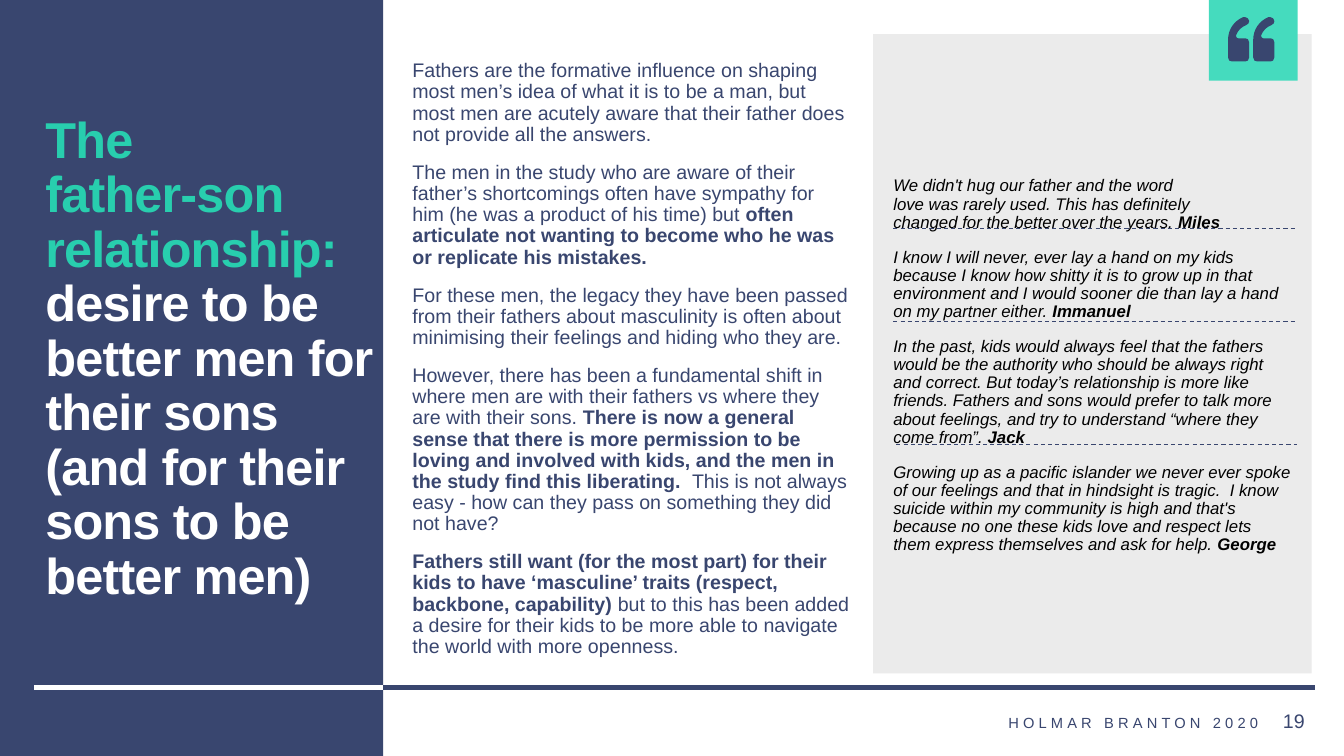
from dataclasses import dataclass

import lxml.etree
import pptx
import pptx.dml.color
import pptx.enum.dml
import pptx.enum.shapes
import pptx.enum.text
import pptx.oxml.ns
import pptx.util

Inches = pptx.util.Inches
qn = pptx.oxml.ns.qn
Align = pptx.enum.text.PP_ALIGN
Anchor = pptx.enum.text.MSO_ANCHOR
COLORS = {"navy": "39466F", "teal": "28CEAE", "mint": "45DBBE",
          "grey": "EBEBEB", "white": "FFFFFF", "black": "000000"}


@dataclass(frozen=True)
class Box:
    left: float
    top: float
    width: float
    height: float


@dataclass(frozen=True)
class Panel:
    box: Box
    color: str


@dataclass(frozen=True)
class Rule:
    left: float
    right: float
    y: float
    color: str = "navy"
    width: float = 3
    dashed: bool = False


@dataclass(frozen=True)
class Span:
    text: str
    bold: bool = False
    color: str = ""


@dataclass(frozen=True)
class Style:
    size: float
    color: str
    bold: bool = False
    italic: bool = False
    tracking: int = 0
    align: Align = Align.LEFT
    line: float = 0.9
    before: float = 0


FOOTER_RULE = Rule(0.34, 13.04, 6.82)
TITLE_RULE = Rule(0.34, 3.8, 6.82, "white")
QUOTE_RULES = [Rule(8.86, 12.84, 2.27, width=0.75, dashed=True),
               Rule(8.86, 12.84, 3.19, width=0.75, dashed=True),
               Rule(8.89, 12.86, 4.41, width=0.75, dashed=True)]
PANELS = [Panel(Box(8.66, 0.34, 4.35, 6.34), "grey"),
          Panel(Box(11.99, 0, 0.88, 0.8), "mint"),
          Panel(Box(0, 0, 3.8, 7.5), "navy")]
MARK_START = (12.18, 0.57)
MARK_CURVES = [
    ((12.18, 0.6), (12.2, 0.61), (12.22, 0.61)),
    ((12.35, 0.61),) * 3,
    ((12.37, 0.61), (12.39, 0.6), (12.39, 0.57)),
    ((12.39, 0.42),) * 3,
    ((12.39, 0.39), (12.37, 0.38), (12.35, 0.38)),
    ((12.28, 0.38),) * 3,
    ((12.27, 0.38), (12.26, 0.37), (12.26, 0.36)),
    ((12.26, 0.35),) * 3,
    ((12.28, 0.3), (12.31, 0.27), (12.36, 0.25)),
    ((12.38, 0.24), (12.39, 0.23), (12.39, 0.21)),
    ((12.39, 0.19), (12.37, 0.17), (12.35, 0.17)),
    ((12.34, 0.17), (12.34, 0.17), (12.33, 0.17)),
    ((12.24, 0.21), (12.18, 0.29), (12.18, 0.4)),
]
TITLE = [[Span("The \nfather-son relationship: ", color="teal"),
          Span("desire to be better men for their sons (and for their sons to be better men)")]]
FINDINGS = [
    [Span("Fathers are the formative influence on shaping most men’s idea of what it is to be a man, but most men are acutely aware that their father does not provide all the answers.")],
    [Span("The men in the study who are aware of their father’s shortcomings often have sympathy for him (he was a product of his time) but "),
     Span("often articulate not wanting to become who he was or replicate his mistakes.", True)],
    [Span("For these men, the legacy they have been passed from their fathers about masculinity is often about minimising their feelings and hiding who they are.")],
    [Span("However, there has been a fundamental shift in where men are with their fathers vs where they are with their sons. "),
     Span("There is now a general sense that there is more permission to be loving and involved with kids, and the men in the study find this liberating.  ", True),
     Span("This is not always easy - how can they pass on something they did not have?")],
    [Span("Fathers still want (for the most part) for their kids to have ‘masculine’ traits (respect, backbone, capability) ", True),
     Span("but to this has been added a desire for their kids to be more able to navigate the world with more openness.")],
]
QUOTES = [
    ("We didn't hug our father and the word \nlove was rarely used. This has definitely \nchanged for the better over the years. ", "Miles"),
    ("I know I will never, ever lay a hand on my kids because I know how shitty it is to grow up in that environment and I would sooner die than lay a hand on my partner either. ", "Immanuel"),
    ("In the past, kids would always feel that the fathers would be the authority who should be always right and correct. But today’s relationship is more like friends. Fathers and sons would prefer to talk more about feelings, and try to understand “where they come from”. ", "Jack"),
    ("Growing up as a pacific islander we never ever spoke of our feelings and that in hindsight is tragic.  I know suicide within my community is high and that's because no one these kids love and respect lets them express themselves and ask for help. ", "George"),
]


def rgb(name: str) -> pptx.dml.color.RGBColor:
    return pptx.dml.color.RGBColor.from_string(COLORS[name])


def paint(sp, color: str) -> None:
    sp.shadow.inherit = False
    sp.fill.solid()
    sp.fill.fore_color.rgb = rgb(color)
    sp.line.fill.background()


def add_panel(s, panel: Panel) -> None:
    b = panel.box
    paint(s.shapes.add_shape(pptx.enum.shapes.MSO_SHAPE.RECTANGLE, Inches(b.left),
                             Inches(b.top), Inches(b.width), Inches(b.height)), panel.color)


def add_rule(s, rule: Rule) -> None:
    c = s.shapes.add_connector(pptx.enum.shapes.MSO_CONNECTOR.STRAIGHT, Inches(rule.left),
                               Inches(rule.y), Inches(rule.right), Inches(rule.y))
    c.line.color.rgb = rgb(rule.color)
    c.line.width = pptx.util.Pt(rule.width)
    if rule.dashed:
        c.line.dash_style = pptx.enum.dml.MSO_LINE.DASH
    lxml.etree.SubElement(c._element.spPr, qn("a:effectLst"))


def mark_points(dx: float) -> list[tuple[int, int]]:
    controls = [MARK_START] + [point for curve in MARK_CURVES for point in curve]
    return [(Inches(x + dx), Inches(y)) for x, y in controls]


def add_quote_mark(s) -> None:
    left, right = mark_points(0), mark_points(0.25)
    outline = s.shapes.build_freeform(*left[0])
    outline.add_line_segments(left[1:])
    outline.move_to(*right[0])
    outline.add_line_segments(right[1:])
    sp = outline.convert_to_shape()
    paint(sp, "navy")
    segments = list(sp._element.iter(qn("a:lnTo")))
    for i in range(0, len(segments), 3):
        curve = lxml.etree.Element(qn("a:cubicBezTo"))
        segments[i].addprevious(curve)
        for segment in segments[i:i + 3]:
            curve.append(segment[0])
            segment.getparent().remove(segment)


def fill_text(sp, box: Box, paragraphs: list[list[Span]], style: Style,
              anchor: Anchor = Anchor.TOP, bottom: float = 0.05) -> None:
    sp.left, sp.top = Inches(box.left), Inches(box.top)
    sp.width, sp.height = Inches(box.width), Inches(box.height)
    tf = sp.text_frame
    tf.word_wrap = True
    tf.auto_size = pptx.enum.text.MSO_AUTO_SIZE.NONE
    tf.vertical_anchor = anchor
    tf.margin_bottom = Inches(bottom)
    for i, spans in enumerate(paragraphs):
        p = tf.add_paragraph() if i else tf.paragraphs[0]
        p.alignment, p.line_spacing = style.align, style.line
        p.space_before = pptx.util.Pt(style.before)
        p.font.name, p.font.size = "Arial", pptx.util.Pt(style.size)
        p.font.bold, p.font.italic = style.bold, style.italic
        p.font.color.rgb = rgb(style.color)
        p.font._element.set("spc", str(style.tracking))
        pPr = p._p.get_or_add_pPr()
        pPr.set("marL", "0")
        pPr.set("indent", "0")
        pPr.defRPr.addprevious(lxml.etree.Element(qn("a:buNone")))
        for span in spans:
            for j, line in enumerate(span.text.split("\n")):
                if j:
                    p.add_line_break()
                r = p.add_run()
                r.text = line
                if span.bold:
                    r.font.bold = True
                if span.color:
                    r.font.color.rgb = rgb(span.color)


def main() -> None:
    prs = pptx.Presentation()
    prs.slide_width, prs.slide_height = Inches(13.33), Inches(7.5)
    s = prs.slides.add_slide(prs.slide_layouts[3])
    title, findings, quotes = s.placeholders
    add_rule(s, FOOTER_RULE)
    for text, box, style in (
            ("19", Box(12.57, 6.98, 0.47, 0.34), Style(14, "navy", align=Align.RIGHT, line=1)),
            ("HOLMAR BRANTON 2020", Box(8.89, 7.03, 3.69, 0.29),
             Style(10.5, "navy", tracking=300, align=Align.RIGHT, line=1))):
        fill_text(s.shapes.add_textbox(0, 0, 0, 0), box, [[Span(text)]], style)
    for panel in PANELS:
        add_panel(s, panel)
    add_quote_mark(s)
    add_rule(s, TITLE_RULE)
    for sp in (title, findings, quotes):
        s.shapes._spTree.append(sp._element)
    fill_text(title, Box(0.35, 1.09, 3.45, 5.03), TITLE,
              Style(36, "white", bold=True, tracking=-60))
    fill_text(findings, Box(3.99, 0.61, 4.56, 5.91), FINDINGS,
              Style(14, "navy", before=12), Anchor.MIDDLE)
    fill_text(quotes, Box(8.76, 1.26, 4.16, 5.6),
              [[Span(text), Span(name, True)] for text, name in QUOTES],
              Style(12, "black", italic=True, before=12), Anchor.MIDDLE, 0.91)
    for rule in QUOTE_RULES:
        add_rule(s, rule)
    prs.save("out.pptx")


if __name__ == "__main__":
    main()
